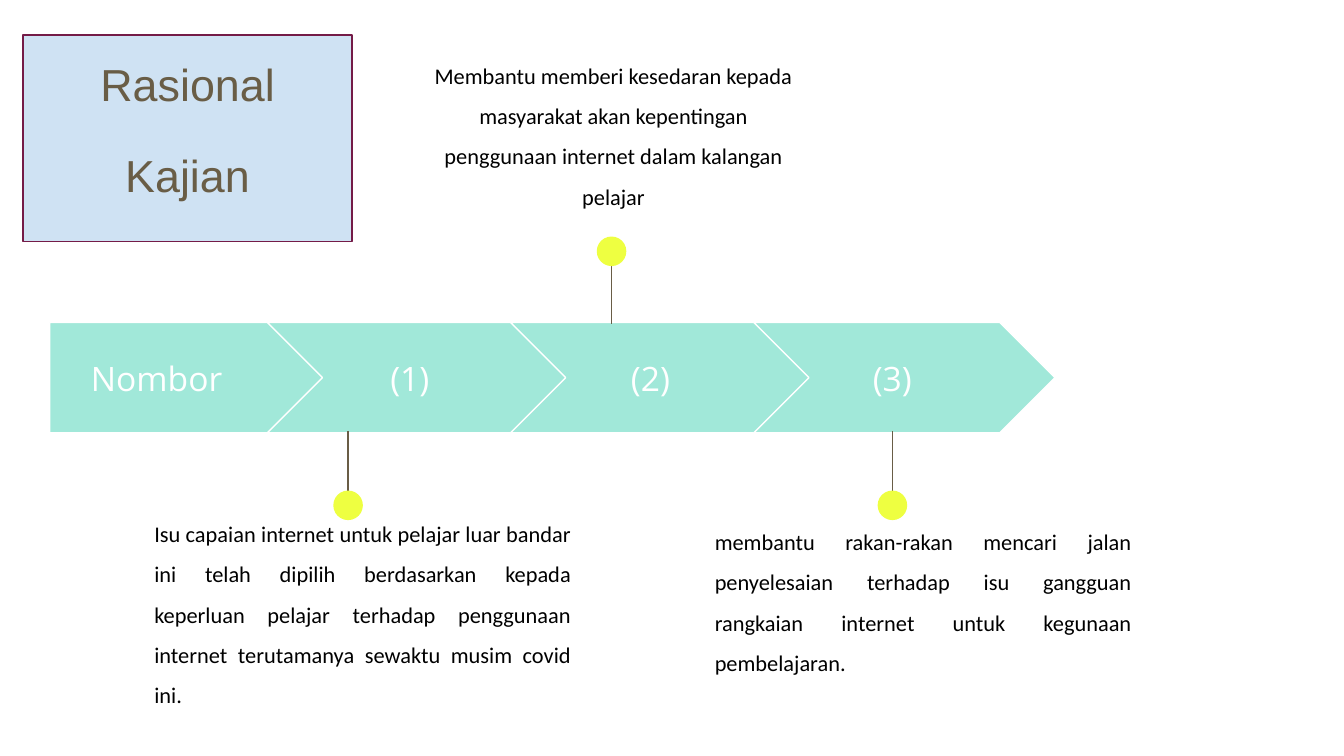
import pptx
import pptx.util
import pptx.dml.color
import pptx.enum.shapes
import pptx.enum.text
import pptx.oxml

Inches, Pt = pptx.util.Inches, pptx.util.Pt
SHAPE = pptx.enum.shapes.MSO_SHAPE
ALIGN = pptx.enum.text.PP_ALIGN
ANCHOR = pptx.enum.text.MSO_ANCHOR

# Content
TITLE = ["Rasional", "Kajian"]
# label, left and width of the label box
STEPS = [("Nombor", 0.37, 1.59), ("(1)", 2.33, 1.44),
         ("(2)", 4.12, 1.44), ("(3)", 5.92, 1.44)]
# text, box, alignment, x of the pin, direction of the pin
NOTES = [
    ("Isu capaian internet untuk pelajar luar bandar ini telah dipilih "
     "berdasarkan kepada keperluan pelajar terhadap penggunaan internet "
     "terutamanya sewaktu musim covid ini.",
     (1.05, 3.67, 3.3, 1.43), ALIGN.JUSTIFY, 2.59, "down"),
    ("Membantu memberi kesedaran kepada masyarakat akan kepentingan "
     "penggunaan internet dalam kalangan pelajar",
     (3.09, 0.26, 2.95, 1.35), ALIGN.CENTER, 4.55, "up"),
    ("membantu rakan-rakan mencari jalan penyelesaian terhadap isu gangguan "
     "rangkaian internet untuk kegunaan pembelajaran.",
     (5.22, 3.73, 3.3, 0.99), ALIGN.JUSTIFY, 6.64, "down"),
]

# Formats
COLORS = {"arrow": "A1E8D9", "white": "FFFFFF", "title_fill": "CFE2F3",
          "title_line": "741B47", "brown": "695D46", "dot": "EEFF41",
          "black": "000000"}
TITLE_FONT = {"name": "Arial", "size": Pt(24)}
LABEL_FONT = {"name": "Open Sans", "size": Pt(18)}
NOTE_FONT = {"name": "Calibri", "size": Pt(12)}
NOTE_SPACING = {"line_spacing": 1.5, "space_before": Pt(12), "space_after": Pt(12)}

# Arrow band and pins
BAND_TOP, BAND_H = 2.4, 0.82
FIRST_W, CHEVRON_W = 2.05, 2.24
CHEVRON_LEFT, CHEVRON_STEP = 1.99, 1.81
DOT = 0.22
# outer end and band end of the line, top of the dot
PINS = {"up": (1.8, 2.41, 1.76), "down": (3.82, 3.21, 3.65)}

prs = pptx.Presentation()
prs.slide_width = Inches(10)
prs.slide_height = prs.slide_width * 9 // 16
s = prs.slides.add_slide(prs.slide_layouts[6])


def rgb(name):
    return pptx.dml.color.RGBColor.from_string(COLORS[name])


def add_shape(kind, box, fill, line=None):
    sp = s.shapes.add_shape(kind, *map(Inches, box))
    sp.shadow.inherit = False
    sp.fill.solid()
    sp.fill.fore_color.rgb = rgb(fill)
    if line:
        sp.line.color.rgb = rgb(line)
        sp.line.width = Pt(0.75)
    else:
        sp.line.fill.background()
    return sp


def set_frame(sp, anchor):
    tf = sp.text_frame
    tf.word_wrap = True
    tf.vertical_anchor = anchor
    for side in ("left", "right", "top", "bottom"):
        setattr(tf, f"margin_{side}", Inches(0.1))
    return tf


def write(p, text, font, color, align, spacing=None):
    p.alignment = align
    for key, value in (spacing or {}).items():
        setattr(p, key, value)
    r = p.add_run()
    r.text = text
    r.font.color.rgb = rgb(color)
    for key, value in font.items():
        setattr(r.font, key, value)


def add_text(box, anchor, *style):
    sp = s.shapes.add_textbox(*map(Inches, box))
    write(set_frame(sp, anchor).paragraphs[0], *style)


def add_pin(x, direction):
    outer, inner, dot_top = PINS[direction]
    line = s.shapes.add_connector(pptx.enum.shapes.MSO_CONNECTOR.STRAIGHT,
                                  *map(Inches, (x, outer, x, inner)))
    line.line.color.rgb = rgb("brown")
    line.line.width = Pt(0.75)
    props = line._element.spPr
    props.append(props.makeelement(pptx.oxml.ns.qn("a:effectLst"), {}))
    add_shape(SHAPE.OVAL, (x - DOT / 2, dot_top, DOT, DOT), "dot")


# Title box
title = add_shape(SHAPE.RECTANGLE, (0.17, 0.26, 2.45, 1.54), "title_fill", "title_line")
tf = set_frame(title, ANCHOR.TOP)
for i, word in enumerate(TITLE):
    p = tf.add_paragraph() if i else tf.paragraphs[0]
    gap = Pt(16 if i else 0)
    write(p, word, TITLE_FONT, "brown", ALIGN.CENTER,
          {"line_spacing": 1.15, "space_before": gap, "space_after": gap})

# Arrow band with labels
for i, (label, left, width) in enumerate(STEPS):
    if i:
        x = CHEVRON_LEFT + (i - 1) * CHEVRON_STEP
        kind, box = SHAPE.CHEVRON, (x, BAND_TOP, CHEVRON_W, BAND_H)
    else:
        kind, box = SHAPE.PENTAGON, (left, BAND_TOP, FIRST_W, BAND_H)
    add_shape(kind, box, "arrow", "white")
    add_text((left, 2.56, width, 0.51), ANCHOR.MIDDLE,
             label, LABEL_FONT, "white", ALIGN.CENTER)

# Pins with notes
for text, box, align, x, direction in NOTES:
    add_pin(x, direction)
    add_text(box, ANCHOR.TOP, text, NOTE_FONT, "black", align, NOTE_SPACING)

prs.save("out.pptx")
